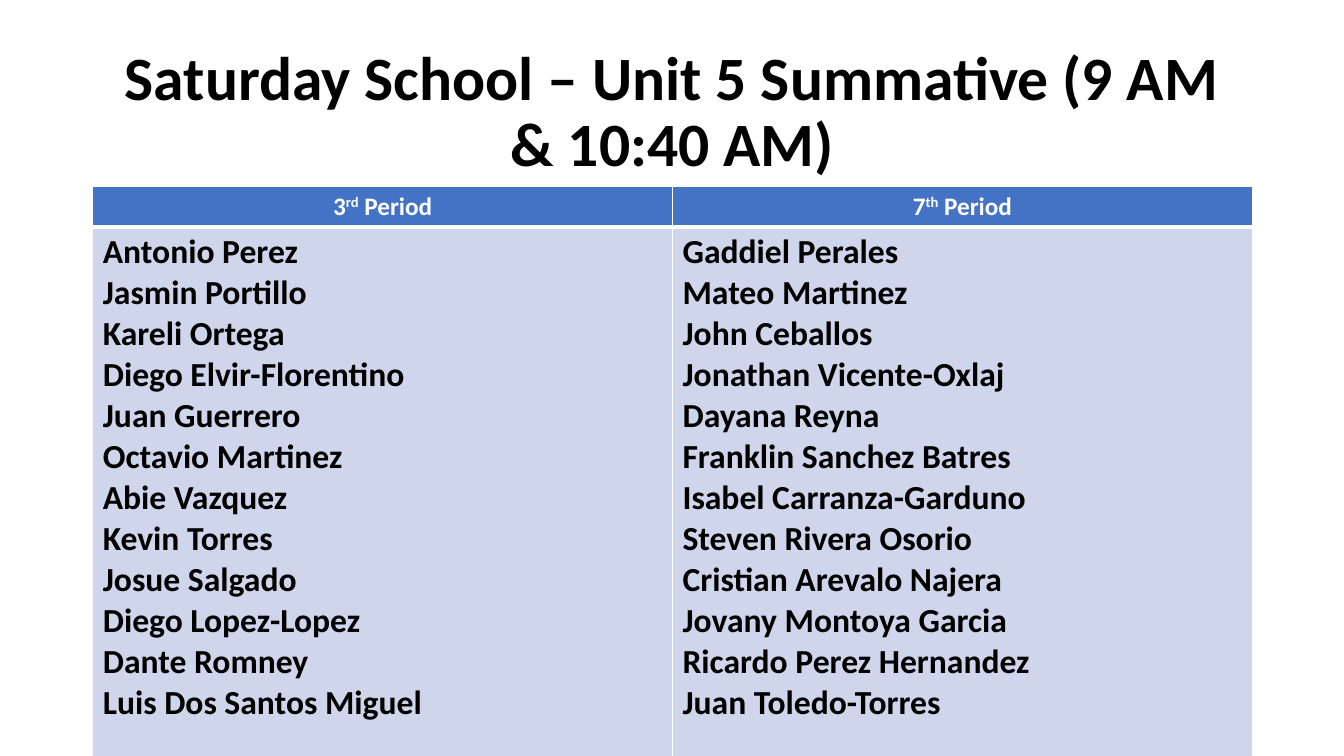
import dataclasses

import pptx
import pptx.dml.color
import pptx.enum.text
import pptx.oxml
import pptx.oxml.ns
import pptx.util

TITLE = "Saturday School – Unit 5 Summative (9 AM & 10:40 AM)"
PERIODS = [
    ("3", "rd", [
        "Antonio Perez", "Jasmin Portillo", "Kareli Ortega",
        "Diego Elvir-Florentino", "Juan Guerrero", "Octavio Martinez",
        "Abie Vazquez", "Kevin Torres", "Josue Salgado",
        "Diego Lopez-Lopez", "Dante Romney", "Luis Dos Santos Miguel",
    ]),
    ("7", "th", [
        "Gaddiel Perales", "Mateo Martinez", "John Ceballos",
        "Jonathan Vicente-Oxlaj", "Dayana Reyna", "Franklin Sanchez Batres",
        "Isabel Carranza-Garduno", "Steven Rivera Osorio",
        "Cristian Arevalo Najera", "Jovany Montoya Garcia",
        "Ricardo Perez Hernandez", "Juan Toledo-Torres",
    ]),
]


@dataclasses.dataclass(frozen=True)
class Theme:
    font: str = "Calibri"
    dark: str = "000000"
    light: str = "FFFFFF"
    header_fill: str = "4472C4"
    body_fill: str = "CFD5EA"
    title_size: int = 44
    header_size: int = 18
    body_size: int = 24
    thin_border: int = 1
    thick_border: int = 3


class RosterSlide:
    """A slide on a grid of two wide columns and 150 short rows."""

    WIDTH, HEIGHT = 13.33, 7.5
    MARGIN, COLUMN = 0.92, 5.75
    ROW = HEIGHT / 150

    def __init__(self, presentation, theme):
        self.theme = theme
        presentation.slide_width = pptx.util.Inches(self.WIDTH)
        presentation.slide_height = pptx.util.Inches(self.HEIGHT)
        self.slide = presentation.slides.add_slide(presentation.slide_layouts[6])

    def area(self, first_row, last_row, columns):
        """Left, top, width and height of full-width grid rows."""
        return (pptx.util.Inches(self.MARGIN),
                pptx.util.Inches(first_row * self.ROW),
                pptx.util.Inches(columns * self.COLUMN),
                pptx.util.Inches((last_row - first_row) * self.ROW))

    def add_run(self, paragraph, text, size, color, superscript=False):
        run = paragraph.add_run()
        run.text = text
        run.font.name = self.theme.font
        run.font.size = pptx.util.Pt(size)
        run.font.bold = True
        run.font.color.rgb = pptx.dml.color.RGBColor.from_string(color)
        if superscript:
            run.font._element.set("baseline", "30000")

    def add_title(self, text, first_row, last_row):
        shape = self.slide.shapes.add_textbox(*self.area(first_row, last_row, 2))
        frame = shape.text_frame
        frame.word_wrap = True
        frame.vertical_anchor = pptx.enum.text.MSO_ANCHOR.MIDDLE
        paragraph = frame.paragraphs[0]
        paragraph.alignment = pptx.enum.text.PP_ALIGN.CENTER
        paragraph.line_spacing = 0.9
        self.add_run(paragraph, text, self.theme.title_size, self.theme.dark)

    def style_cell(self, cell, fill, top, bottom):
        """Set the fill, and the borders with the given top and bottom widths."""
        properties = cell._tc.get_or_add_tcPr()
        thin = self.theme.thin_border
        for side, width in (("L", thin), ("R", thin), ("T", top), ("B", bottom)):
            properties.append(pptx.oxml.parse_xml(
                f'<a:ln{side} {pptx.oxml.ns.nsdecls("a")} w="{pptx.util.Pt(width)}">'
                f'<a:solidFill><a:srgbClr val="{self.theme.light}"/></a:solidFill>'
                f'</a:ln{side}>'))
        cell.fill.solid()
        cell.fill.fore_color.rgb = pptx.dml.color.RGBColor.from_string(fill)

    def add_roster(self, periods, first_row, header_rows, last_row):
        theme = self.theme
        table = self.slide.shapes.add_table(
            2, len(periods), *self.area(first_row, last_row, len(periods))).table
        table.rows[0].height = pptx.util.Inches(header_rows * self.ROW)
        table.rows[1].height = pptx.util.Inches(
            (last_row - first_row - header_rows) * self.ROW)
        for column, (number, suffix, students) in enumerate(periods):
            header, body = table.cell(0, column), table.cell(1, column)
            self.style_cell(header, theme.header_fill,
                            theme.thin_border, theme.thick_border)
            self.style_cell(body, theme.body_fill,
                            theme.thick_border, theme.thin_border)

            paragraph = header.text_frame.paragraphs[0]
            paragraph.alignment = pptx.enum.text.PP_ALIGN.CENTER
            for text in (number, suffix, " Period"):
                self.add_run(paragraph, text, theme.header_size, theme.light,
                             superscript=text == suffix)

            frame = body.text_frame
            for index, student in enumerate(students):
                paragraph = frame.add_paragraph() if index else frame.paragraphs[0]
                self.add_run(paragraph, student, theme.body_size, theme.dark)


def main():
    presentation = pptx.Presentation()
    roster_slide = RosterSlide(presentation, Theme())
    roster_slide.add_title(TITLE, first_row=8, last_row=37)
    roster_slide.add_roster(PERIODS, first_row=37, header_rows=7.8, last_row=150)
    presentation.save("out.pptx")


if __name__ == "__main__":
    main()
